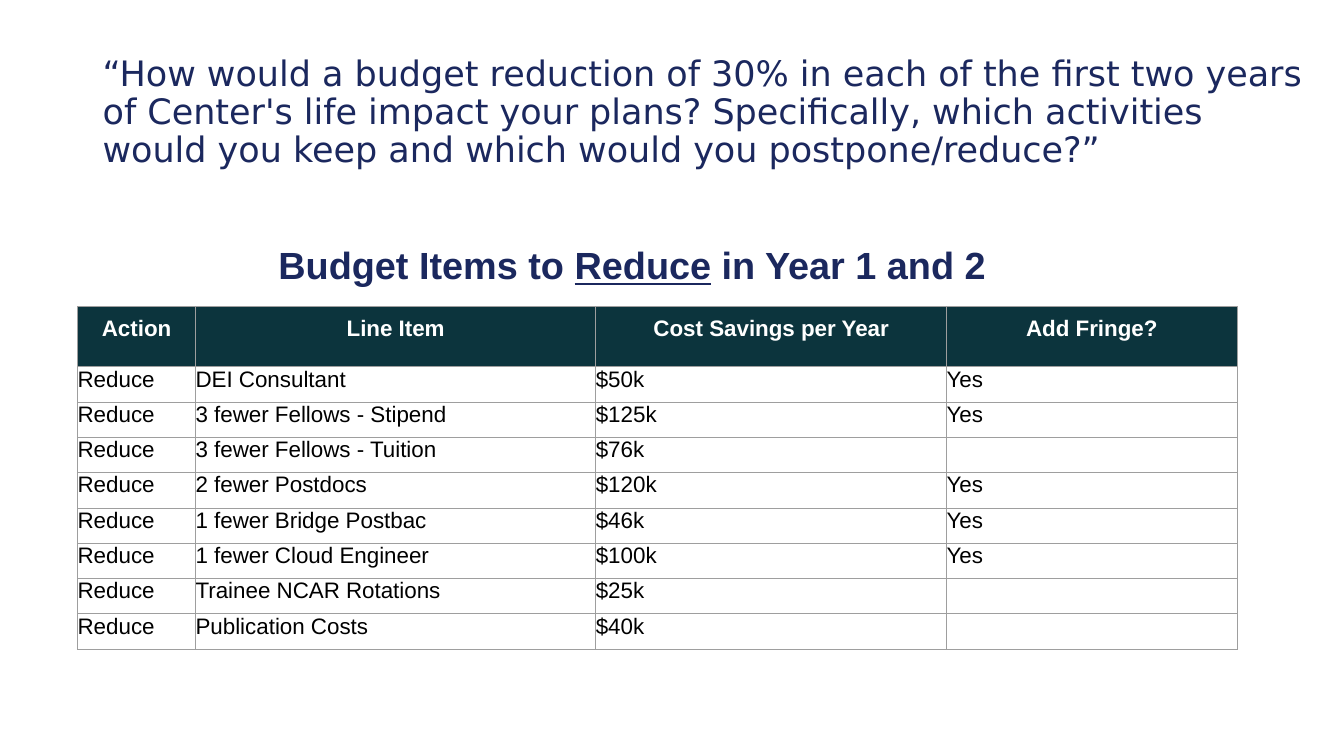
from dataclasses import dataclass

from lxml import etree
from pptx import Presentation
from pptx.dml.color import RGBColor
from pptx.enum.text import MSO_ANCHOR, PP_ALIGN
from pptx.oxml.ns import qn
from pptx.util import Inches, Pt


@dataclass(frozen=True)
class Theme:
    navy: str = "1B285E"
    teal: str = "0C343D"
    white: str = "FFFFFF"
    black: str = "000000"
    grid: str = "9E9E9E"
    body_font: str = "Arial"
    question_font: str = "DejaVu Sans"
    question_size: int = 25
    heading_size: int = 27
    table_size: int = 16
    grid_width: float = 0.75


THEME = Theme()

QUESTION = (
    "“How would a budget reduction of 30% in each of the first two years "
    "of Center's life impact your plans? Specifically, which activities "
    "would you keep and which would you postpone/reduce?”"
)
HEADERS = ("Action", "Line Item", "Cost Savings per Year", "Add Fringe?")
REDUCTIONS = (
    ("DEI Consultant", "$50k", "Yes"),
    ("3 fewer Fellows - Stipend", "$125k", "Yes"),
    ("3 fewer Fellows - Tuition", "$76k", ""),
    ("2 fewer Postdocs", "$120k", "Yes"),
    ("1 fewer Bridge Postbac", "$46k", "Yes"),
    ("1 fewer Cloud Engineer", "$100k", "Yes"),
    ("Trainee NCAR Rotations", "$25k", ""),
    ("Publication Costs", "$40k", ""),
)
COLUMN_WIDTHS = (1.17, 3.97, 3.48, 2.88)
HEADER_HEIGHT = 0.6
ROW_HEIGHT = 0.35


def add_text(p, text, *, size, color, font=THEME.body_font, bold=False, underline=False):
    r = p.add_run()
    r.text = text
    r.font.name = font
    r.font.size = Pt(size)
    r.font.bold = bold
    r.font.underline = underline
    r.font.color.rgb = RGBColor.from_string(color)


def set_margins(target, horizontal, vertical):
    target.margin_left = target.margin_right = Inches(horizontal)
    target.margin_top = target.margin_bottom = Inches(vertical)


def add_box(s, left, top, width, height, *, vertical_margin, anchor=MSO_ANCHOR.TOP):
    sp = s.shapes.add_textbox(Inches(left), Inches(top), Inches(width), Inches(height))
    tf = sp.text_frame
    tf.word_wrap = True
    tf.vertical_anchor = anchor
    set_margins(tf, 0.1, vertical_margin)
    return tf.paragraphs[0]


def add_question(s):
    p = add_box(s, 0.92, 0.4, 12.16, 1.45, vertical_margin=0.05, anchor=MSO_ANCHOR.MIDDLE)
    p.line_spacing = 0.9
    add_text(p, QUESTION, size=THEME.question_size, color=THEME.navy, font=THEME.question_font)


def add_heading(s):
    p = add_box(s, 1.94, 2.3, 8.66, 0.59, vertical_margin=0.1)
    p.alignment = PP_ALIGN.CENTER
    for text, underline in (("Budget Items to ", False), ("Reduce", True), (" in Year 1 and 2", False)):
        add_text(p, text, size=THEME.heading_size, color=THEME.navy, bold=True, underline=underline)


def set_borders(cell):
    tc_pr = cell._tc.get_or_add_tcPr()
    for side in ("lnL", "lnR", "lnT", "lnB"):
        line = etree.SubElement(tc_pr, qn(f"a:{side}"), w=str(Pt(THEME.grid_width)))
        fill = etree.SubElement(line, qn("a:solidFill"))
        etree.SubElement(fill, qn("a:srgbClr"), val=THEME.grid)


def fill_cell(cell, text, is_header):
    margin = 0.1 if is_header else 0
    set_margins(cell, margin, margin)
    set_borders(cell)
    p = cell.text_frame.paragraphs[0]
    if is_header:
        cell.fill.solid()
        cell.fill.fore_color.rgb = RGBColor.from_string(THEME.teal)
        p.alignment = PP_ALIGN.CENTER
    else:
        cell.fill.background()
    if text:
        color = THEME.white if is_header else THEME.black
        add_text(p, text, size=THEME.table_size, color=color, bold=is_header)
    else:
        p.font.size = Pt(THEME.table_size)


def add_reductions_table(s):
    rows = [HEADERS] + [("Reduce", *reduction) for reduction in REDUCTIONS]
    heights = [HEADER_HEIGHT] + [ROW_HEIGHT] * len(REDUCTIONS)
    table = s.shapes.add_table(
        len(rows), len(HEADERS), Inches(0.77), Inches(3.04),
        Inches(sum(COLUMN_WIDTHS)), Inches(sum(heights)),
    ).table
    table.horz_banding = False
    for column, width in zip(table.columns, COLUMN_WIDTHS):
        column.width = Inches(width)
    for i, (row, height, texts) in enumerate(zip(table.rows, heights, rows)):
        row.height = Inches(height)
        for cell, text in zip(row.cells, texts):
            fill_cell(cell, text, is_header=i == 0)


def main():
    prs = Presentation()
    prs.slide_width = Inches(13.33)
    prs.slide_height = Inches(7.5)
    s = prs.slides.add_slide(prs.slide_layouts[6])
    add_question(s)
    add_reductions_table(s)
    add_heading(s)
    prs.save("out.pptx")


if __name__ == "__main__":
    main()
